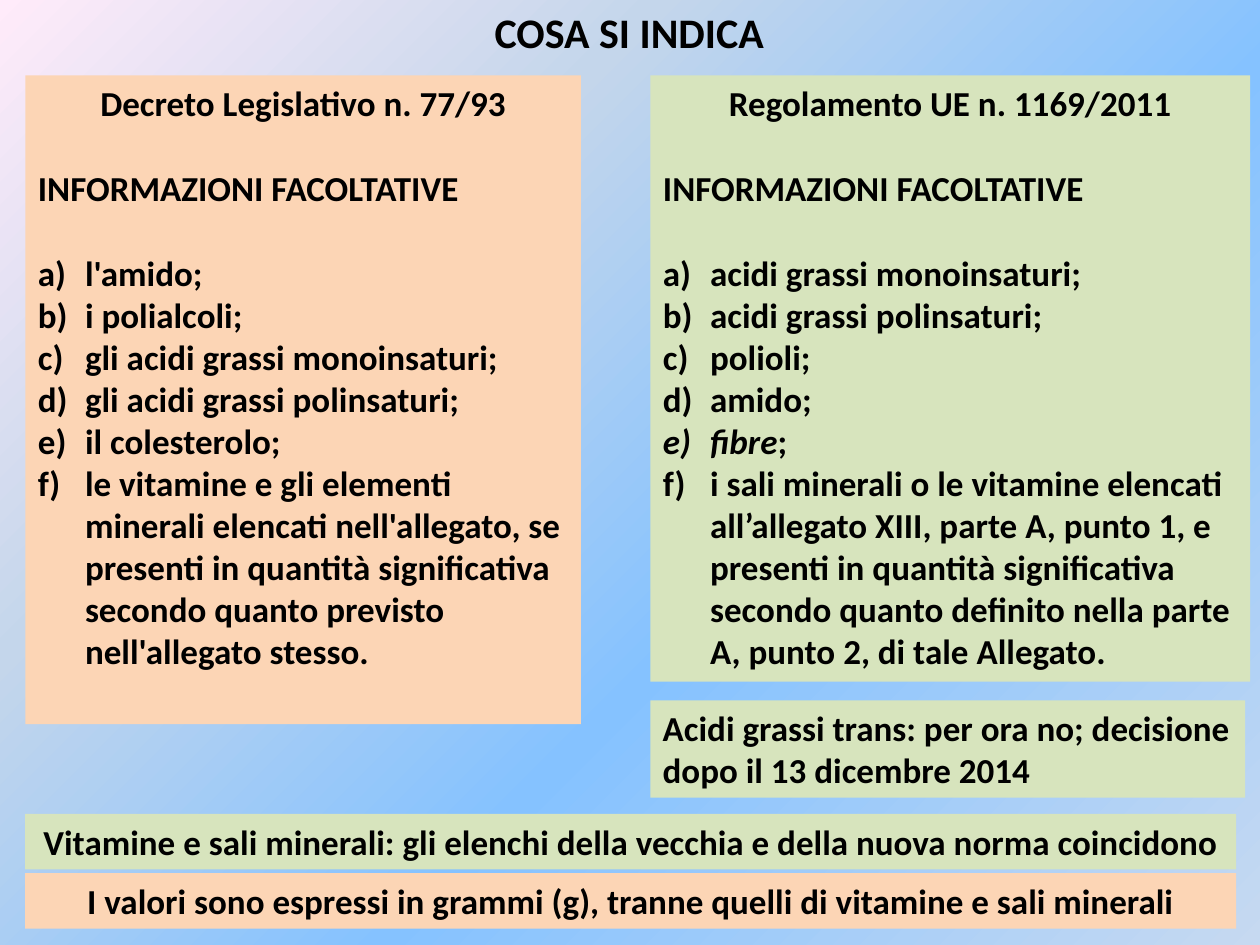
import pptx
import pptx.util
import pptx.dml.color
import pptx.enum.shapes
import pptx.enum.text
import pptx.oxml.ns
import lxml.etree

Cm, Pt = pptx.util.Cm, pptx.util.Pt
RGB = pptx.dml.color.RGBColor
qn = pptx.oxml.ns.qn
ALIGN = pptx.enum.text.PP_ALIGN
ANCHOR = pptx.enum.text.MSO_ANCHOR
PEACH = RGB(0xFC, 0xD5, 0xB5)
GREEN = RGB(0xD7, 0xE4, 0xBD)
BLACK = RGB(0, 0, 0)
STOPS = [
    (0, RGB(0xC6, 0xD9, 0xF1), 36),
    (40, RGB(0x85, 0xC2, 0xFF), 100),
    (70, RGB(0xC4, 0xD6, 0xEB), 100),
    (100, RGB(0xFF, 0xEB, 0xFA), 100),
]
FRAME = {
    "word_wrap": True,
    "auto_size": pptx.enum.text.MSO_AUTO_SIZE.NONE,
    "vertical_anchor": ANCHOR.TOP,
}
TEXT = {"name": "Calibri", "size": Pt(20), "bold": True}


def add_tag(host, tag, **attrs):
    return lxml.etree.SubElement(host, qn(tag), {k: str(v) for k, v in attrs.items()})


def add_line(frame, parts, align, gap=0, item=False, size=20):
    first = not frame.paragraphs[0].runs
    line = frame.paragraphs[0] if first else frame.add_paragraph()
    props = line._p.get_or_add_pPr()
    inset = Cm(0.95) if item else 0
    props.set("marL", str(inset))
    props.set("indent", str(-inset))
    if item:
        add_tag(props, "a:buFont", typeface="Calibri")
        add_tag(props, "a:buAutoNum", type="alphaLcParenR")
    else:
        add_tag(props, "a:buNone")
    for key, val in {"alignment": align, "space_before": Pt(gap)}.items():
        setattr(line, key, val)
    for text, slant in parts:
        run = line.add_run()
        run.text = text
        for key, val in {**TEXT, "size": Pt(size), "italic": slant}.items():
            setattr(run.font, key, val)
        run.font.color.rgb = BLACK


deck = pptx.Presentation()
deck.slide_width, deck.slide_height = Cm(25.4), Cm(19.05)
slide = deck.slides.add_slide(deck.slide_layouts[3])

slide.background.fill.gradient()
grad = slide.element.find(".//" + qn("a:gradFill"))
grad.clear()
stops = add_tag(grad, "a:gsLst")
for pos, tone, alpha in STOPS:
    stop = add_tag(stops, "a:gs", pos=pos * 1000)
    color = add_tag(stop, "a:srgbClr", val=tone)
    if alpha < 100:
        add_tag(color, "a:alpha", val=alpha * 1000)
path = add_tag(grad, "a:path", path="circle")
add_tag(path, "a:fillToRect", l=100000, t=100000)

title, left, right = slide.placeholders
columns = [
    (left, (0.51, 1.52, 11.2, 13.08), PEACH, "Decreto Legislativo n. 77/93", [
        [("l'amido;", False)],
        [("i polialcoli;", False)],
        [("gli acidi grassi monoinsaturi;", False)],
        [("gli acidi grassi polinsaturi;", False)],
        [("il colesterolo;", False)],
        [("le vitamine e gli elementi minerali elencati nell'allegato, se presenti "
          "in quantità significativa secondo quanto previsto nell'allegato stesso.", False)],
    ]),
    (right, (13.11, 1.52, 12.09, 12.22), GREEN, "Regolamento UE n. 1169/2011", [
        [("acidi grassi monoinsaturi;", False)],
        [("acidi grassi polinsaturi;", False)],
        [("polioli;", False)],
        [("amido;", False)],
        [("fibre", True), (";", False)],
        [("i sali minerali o le vitamine elencati all’allegato XIII, parte A, punto 1, e "
          "presenti in quantità significativa secondo quanto definito nella parte A, "
          "punto 2, di tale Allegato.", False)],
    ]),
]
notes = [
    ((13.11, 14.12, 11.99, 1.96), GREEN, ALIGN.LEFT,
     "Acidi grassi trans: per ora no; decisione dopo il 13 dicembre 2014"),
    ((0.51, 16.41, 24.41, 1.12), GREEN, ALIGN.CENTER,
     "Vitamine e sali minerali: gli elenchi della vecchia e della nuova norma coincidono"),
    ((0.51, 17.6, 24.41, 1.12), PEACH, ALIGN.CENTER,
     "I valori sono espressi in grammi (g), tranne quelli di vitamine e sali minerali"),
]

boxes = [(title, (1.09, 0, 23.19, 1.27), None)]
boxes += [(body, area, tone) for body, area, tone, head, items in columns]
for area, tone, align, text in notes:
    note = slide.shapes.add_shape(
        pptx.enum.shapes.MSO_SHAPE.RECTANGLE, *map(Cm, area))
    note.shadow.inherit = False
    note.line.fill.background()
    boxes.append((note, area, tone))
    add_line(note.text_frame, [(text, False)], align)

for box, area, tone in boxes:
    for key, val in zip(("left", "top", "width", "height"), area):
        setattr(box, key, Cm(val))
    for key, val in FRAME.items():
        setattr(box.text_frame, key, val)
    if tone is not None:
        box.fill.solid()
        box.fill.fore_color.rgb = tone

add_line(title.text_frame, [("COSA SI INDICA", False)], ALIGN.CENTER, size=24)
for body, area, tone, head, items in columns:
    frame = body.text_frame
    add_line(frame, [(head, False)], ALIGN.CENTER)
    add_line(frame, [("INFORMAZIONI FACOLTATIVE", False)], ALIGN.LEFT, gap=24.4)
    for num, parts in enumerate(items):
        add_line(frame, parts, ALIGN.LEFT, gap=0 if num else 24.4, item=True)

deck.save("out.pptx")
